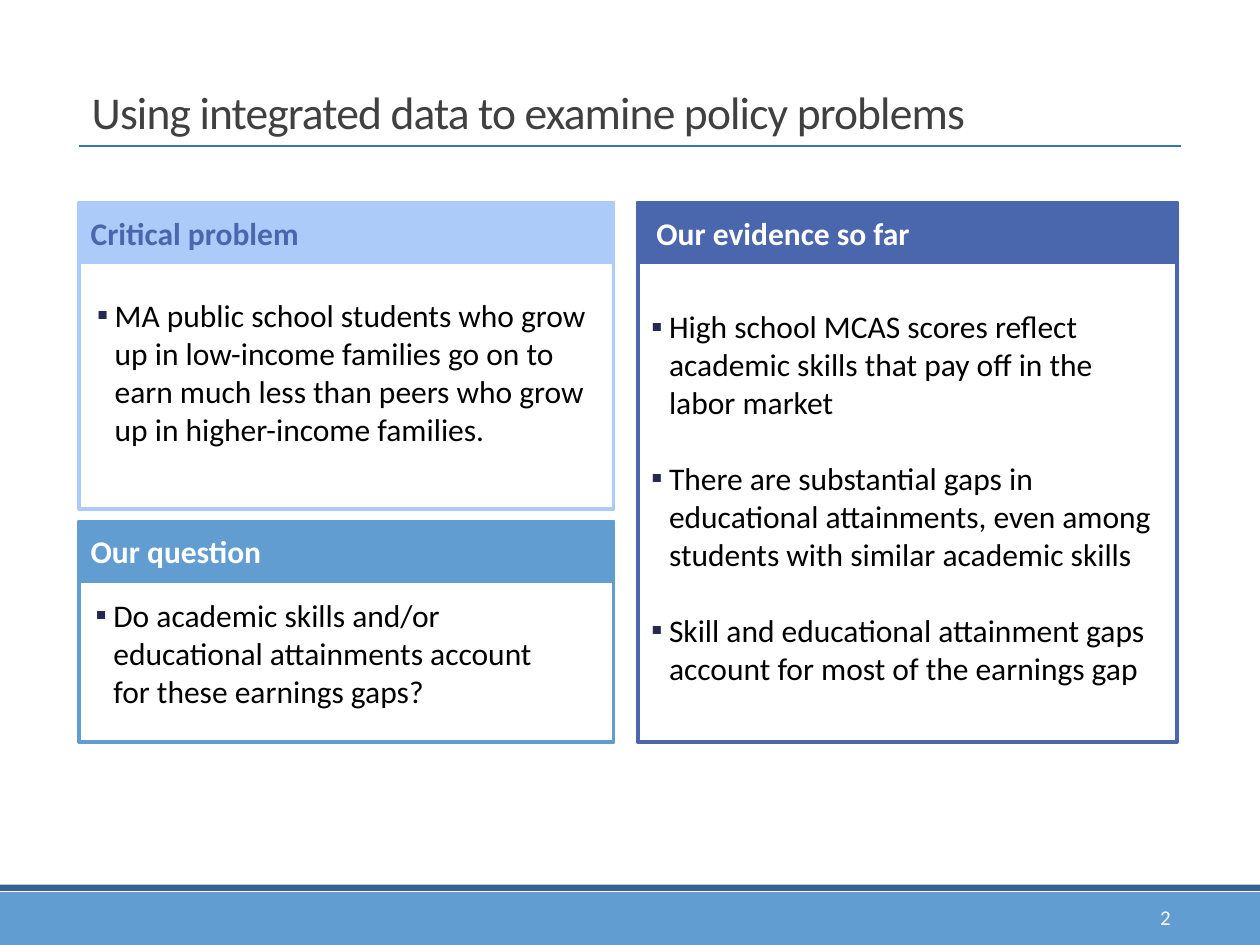
import pptx
import pptx.util
import pptx.dml.color
import pptx.enum.shapes
import pptx.enum.text
from lxml import etree

RGB = pptx.dml.color.RGBColor
SHAPE = pptx.enum.shapes.MSO_SHAPE
ALIGN = pptx.enum.text.PP_ALIGN
ANCHOR = pptx.enum.text.MSO_ANCHOR
Inches, Pt = pptx.util.Inches, pptx.util.Pt

WHITE = RGB(0xFF, 0xFF, 0xFF)
BLACK = RGB(0, 0, 0)
GRAY = RGB(0x40, 0x40, 0x40)
NAVY = RGB(0x24, 0x28, 0x52)
INDIGO = RGB(0x4A, 0x66, 0xAC)
PALE = RGB(0xAC, 0xCB, 0xF9)
SKY = RGB(0x62, 0x9D, 0xD1)
STEEL = RGB(0x37, 0x60, 0x92)
RULE = RGB(0x34, 0x77, 0xB2)
FONT = "Calibri"

# Content
TITLE = "Using integrated data to examine policy problems"
PAGE = "2"
CARDS = [
    dict(head="Our evidence so far", col=1, row=0, span=2, fill=INDIGO,
         ink=WHITE, pad=0.15, body=(0.11, 0.83, 4.07), points=[
             "High school MCAS scores reflect academic skills that pay off in the labor market",
             "There are substantial gaps in educational attainments, even among "
             "students with similar academic skills",
             "Skill and educational attainment gaps account for most of the earnings gap"]),
    dict(head="Critical problem", col=0, row=0, span=1, fill=PALE,
         ink=INDIGO, pad=0.09, body=(0.14, 0.74, 3.91), points=[
             "MA public school students who grow up in low-income families go on to earn "
             "much less than peers who grow up in higher-income families."]),
    dict(head="Our question", col=0, row=1, span=1, fill=SKY,
         ink=WHITE, pad=0.09, body=(0.13, 0.59, 3.75), points=[
             "Do academic skills and/or educational attainments account "
             "for these earnings gaps?"]),
]

# Grid, in inches
WIDE, HIGH = 10, 7.5
EDGE = 0.63
COLS = [(EDGE, 4.24), (5.06, 4.28)]    # left, width
ROWS = [(1.61, 2.43), (4.14, 1.75)]    # top, height
HEAD = 0.47

deck = pptx.Presentation()
deck.slide_width, deck.slide_height = Inches(WIDE), Inches(HIGH)
slide = deck.slides.add_slide(deck.slide_layouts[6])


def add(parent, tag, **attrs):
    """Append a drawing element to an XML parent."""
    node = etree.SubElement(parent, pptx.oxml.ns.qn(tag))
    for key, val in attrs.items():
        node.set(key, val)
    return node


def box(left, top, width, height, fill, line=None):
    rect = slide.shapes.add_shape(
        SHAPE.RECTANGLE, *map(Inches, (left, top, width, height)))
    rect.shadow.inherit = False
    rect.fill.solid()
    rect.fill.fore_color.rgb = fill
    if line is None:
        rect.line.fill.background()
    else:
        rect.line.color.rgb = line
        rect.line.width = Pt(2.25)
    return rect


def area(left, top, width, height):
    return slide.shapes.add_textbox(*map(Inches, (left, top, width, height)))


def write(shape, *lines, size=18, color=BLACK, bold=False, align=ALIGN.LEFT,
          anchor=ANCHOR.TOP, pads=(0.1, 0.05, 0.1, 0.05), bullet=None,
          gap=0, pitch=None, track=None):
    """Fill a shape with paragraphs in one format."""
    frame = shape.text_frame
    frame.word_wrap = True
    frame.vertical_anchor = anchor
    (frame.margin_left, frame.margin_top,
     frame.margin_right, frame.margin_bottom) = map(Inches, pads)
    for i, line in enumerate(lines):
        para = frame.add_paragraph() if i else frame.paragraphs[0]
        run = para.add_run()
        run.text = line
        para.alignment = align
        if pitch:
            para.line_spacing = pitch
        if i and gap:
            para.space_before = Pt(gap)
        if bullet:
            props = para._p.get_or_add_pPr()
            props.set("marL", str(Inches(0.14)))
            props.set("indent", str(-Inches(0.14)))
            add(add(props, "a:buClr"), "a:srgbClr", val=str(NAVY))
            add(props, "a:buFont", typeface=FONT)
            add(props, "a:buChar", char=bullet)
        font = run.font
        font.name, font.size, font.bold = FONT, Pt(size), bold
        font.color.rgb = color
        if track:
            run._r.get_or_add_rPr().set("spc", str(int(track * 100)))


# Footer bands and page number
box(0, 7.08, WIDE, 0.42, SKY)
box(0, 7.02, WIDE, 0.05, STEEL)
write(area(8.31, 7.18, 1.08, 0.2), PAGE, size=12, color=WHITE,
      align=ALIGN.RIGHT, anchor=ANCHOR.MIDDLE)

# Title and its rule
rule = slide.shapes.add_connector(
    pptx.enum.shapes.MSO_CONNECTOR.STRAIGHT,
    *map(Inches, (EDGE, 1.16, WIDE - EDGE, 1.16)))
rule.line.color.rgb = RULE
rule.line.width = Pt(1)
add(rule._element.spPr, "a:effectLst")
write(area(EDGE, 0.31, WIDE - 2 * EDGE, 0.84), TITLE, size=26, color=GRAY,
      anchor=ANCHOR.BOTTOM, pitch=0.85, track=-0.5)

# Cards: frame, heading, bullets
for card in CARDS:
    left, width = COLS[card["col"]]
    top = ROWS[card["row"]][0]
    low, last = ROWS[card["row"] + card["span"] - 1]
    height = low + last - top
    fill = card["fill"]
    box(left, top, width, height, WHITE, fill)
    write(box(left, top, width, HEAD, fill, fill), card["head"],
          color=card["ink"], bold=True, anchor=ANCHOR.MIDDLE,
          pads=(card["pad"], 0.06, 0.06, 0.06))
    over, down, span = card["body"]
    write(area(left + over, top + down, span, height - down - 0.2),
          *card["points"], bullet="▪", gap=22, pads=(0, 0, 0, 0))

deck.save("out.pptx")
